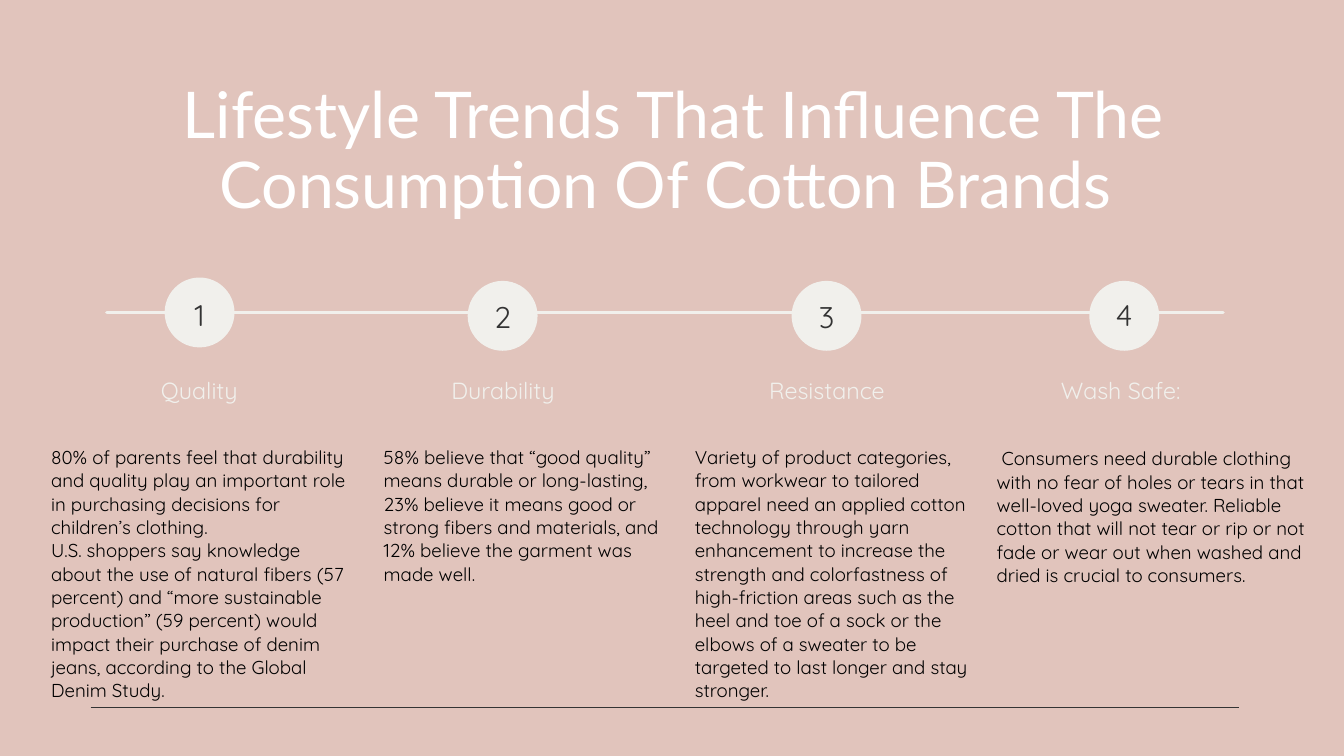
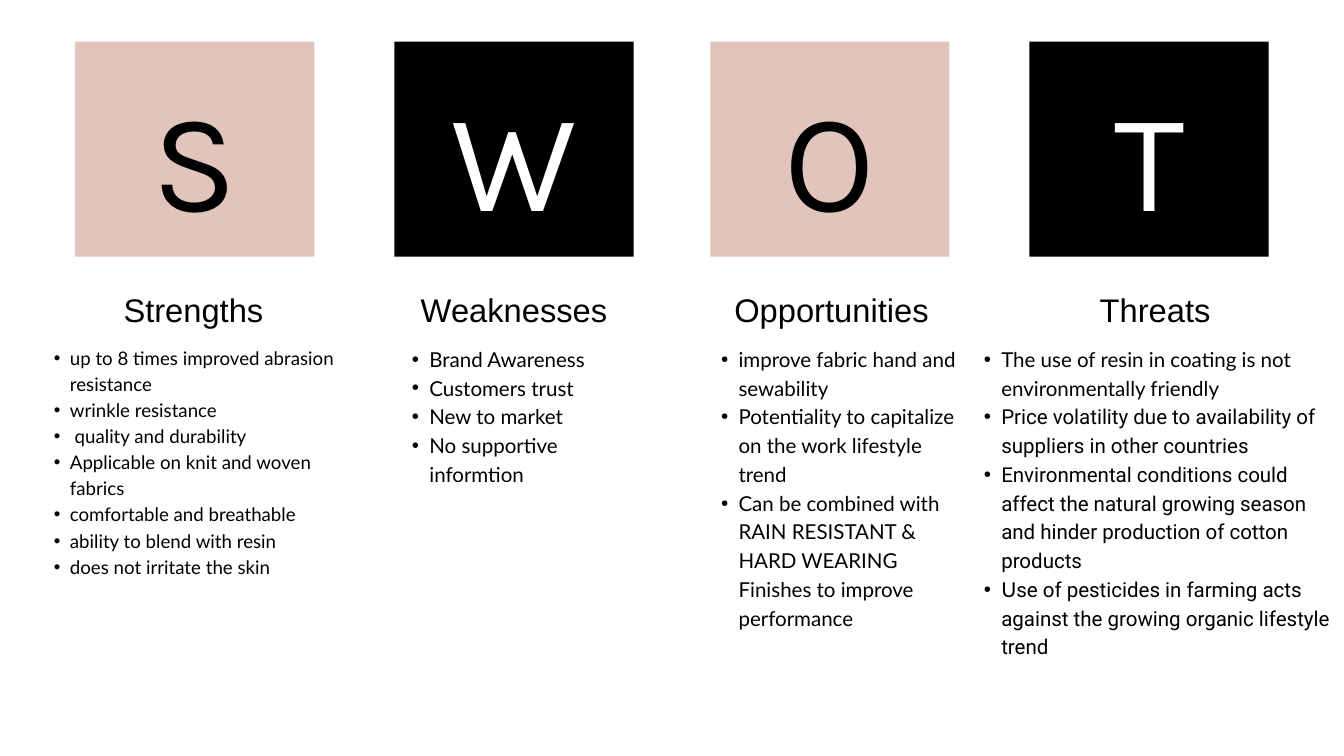
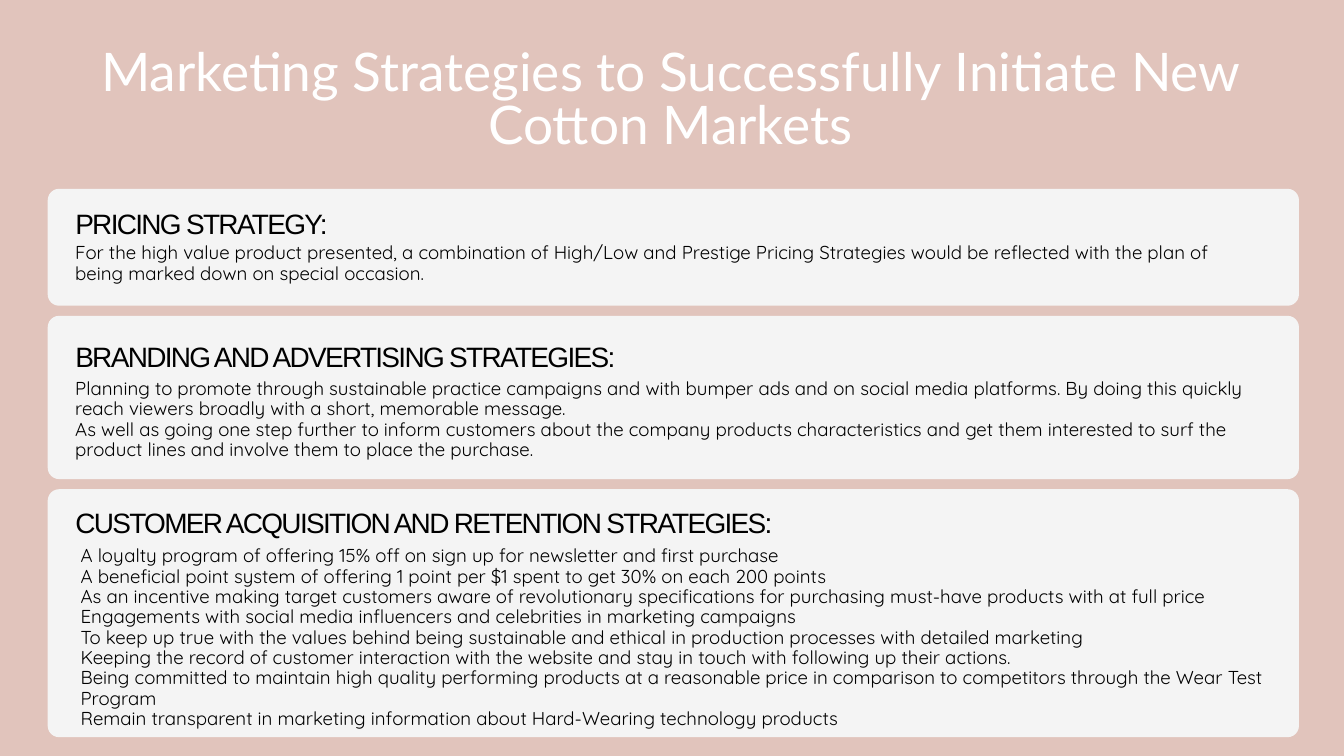
from dataclasses import dataclass, replace
from typing import NamedTuple, Sequence, Union

from lxml.etree import SubElement
from pptx import Presentation
from pptx.dml.color import RGBColor
from pptx.enum.shapes import MSO_CONNECTOR, MSO_SHAPE
from pptx.enum.text import MSO_AUTO_SIZE, PP_ALIGN
from pptx.oxml.ns import qn
from pptx.presentation import Presentation as PresentationType
from pptx.shapes.autoshape import Shape
from pptx.slide import Slide
from pptx.text.text import _Paragraph as Paragraph
from pptx.util import Inches, Pt

BLUSH = "E1C4BC"
IVORY = "F1F0EC"
PALE_GRAY = "F4F4F4"
CHARCOAL = "333333"
BLACK = "000000"
WHITE = "FFFFFF"


class Box(NamedTuple):
    """Left, top, width and height in inches."""

    left: float
    top: float
    width: float
    height: float


class Run(NamedTuple):
    """A piece of text with its own font."""

    text: str
    font: str


ParagraphText = Union[str, Sequence[Run]]


@dataclass(frozen=True)
class TextStyle:
    """Look of a text; sizes and spacing in points, the indent in inches."""

    font: str
    size: float
    line_spacing: float
    color: str = BLACK
    centered: bool = False
    tracking: float = 0
    bullet_margin: float = 0
    bullet_hang: float = 0


@dataclass(frozen=True)
class TrendStep:
    """One numbered step of the trend timeline."""

    circle_left: float
    circle_top: float
    number_top: float
    heading: str
    heading_left: float
    heading_width: float
    body: Sequence[str]
    body_box: Box


@dataclass(frozen=True)
class SwotColumn:
    """One tile of the SWOT slide with its heading and bullets."""

    heading: str
    tile_left: float
    tile_color: str
    letter_color: str
    text_left: float
    text_width: float
    bullets: Sequence[ParagraphText]
    bullet_style: TextStyle


@dataclass(frozen=True)
class StrategyCard:
    """One rounded card of the strategy slide."""

    heading: str
    top: float
    height: float
    heading_top: float
    body_left: float
    body_top: float
    body: Sequence[str]


TREND_TITLE = TextStyle("Lato", 69, 75.2, WHITE, centered=True)
STRATEGY_TITLE = replace(TREND_TITLE, size=57, line_spacing=57)
STEP_NUMBER = TextStyle("Quicksand", 32, 34.9, CHARCOAL, centered=True)
STEP_HEADING = TextStyle("Quicksand", 25, 27.2, IVORY, centered=True)
STEP_BODY = TextStyle("Quicksand", 20, 25)
SWOT_LETTER = TextStyle("Karla", 150, 195, centered=True, tracking=6)
SWOT_HEADING = TextStyle("Arial", 35, 45.5, centered=True)
SWOT_BULLET = TextStyle("Lato", 22, 30.8, bullet_margin=0.52, bullet_hang=0.26)
SMALL_BULLET = TextStyle("Lato", 20, 28, bullet_margin=0.47, bullet_hang=0.24)
CARD_HEADING = TextStyle("Arial", 30, 36, tracking=-1.8)
CARD_BODY = TextStyle("Quicksand", 20, 21.8)

CIRCLE_SIZE = 1.04
CARD_RADIUS = 0.17

TREND_STEPS = (
    TrendStep(
        2.45, 4.13, 4.46, "Quality", 1.06, 3.81,
        (
            "80% of parents feel that durability and quality play an important role in "
            "purchasing decisions for children’s clothing.",
            "U.S. shoppers say knowledge about the use of natural fibers (57 percent) and "
            "“more sustainable production” (59 percent) would impact their purchase of "
            "denim jeans, according to the Global Denim Study.",
        ),
        Box(0.76, 6.62, 4.51, 4.2),
    ),
    TrendStep(
        6.96, 4.18, 4.49, "Durability", 5.58, 3.81,
        (
            "58% believe that “good quality” means durable or long-lasting, 23% believe "
            "it means good or strong fibers and materials, and 12% believe the garment "
            "was made well.",
        ),
        Box(5.71, 6.62, 4.15, 2.45),
    ),
    TrendStep(
        11.78, 4.18, 4.49, "Resistance", 10.4, 3.81,
        (
            "Variety of product categories, from workwear to tailored apparel need an "
            "applied cotton technology through yarn enhancement to increase the strength "
            "and colorfastness of high-friction areas such as the heel and toe of a sock "
            "or the elbows of a sweater to be targeted to last longer and stay stronger.",
        ),
        Box(10.34, 6.62, 4.29, 3.85),
    ),
    TrendStep(
        16.21, 4.18, 4.47, "Wash Safe: ", 14.47, 4.51,
        (
            " Consumers need durable clothing with no fear of holes or tears in that "
            "well-loved yoga sweater. Reliable cotton that will not tear or rip or not "
            "fade or wear out when washed and dried is crucial to consumers.",
        ),
        Box(14.83, 6.64, 4.69, 2.45),
    ),
)

SWOT_COLUMNS = (
    SwotColumn(
        "Strengths", 1.12, BLUSH, BLACK, 0.57, 4.62,
        (
            "up to 8 times improved abrasion resistance",
            "wrinkle resistance",
            " quality and durability",
            "Applicable on knit and woven fabrics",
            "comfortable and breathable",
            "ability to blend with resin",
            "does not irritate the skin",
        ),
        SMALL_BULLET,
    ),
    SwotColumn(
        "Weaknesses", 5.87, BLACK, WHITE, 5.87, 3.56,
        (
            "Brand Awareness",
            "Customers trust",
            "New to market",
            "No supportive informtion",
        ),
        SWOT_BULLET,
    ),
    SwotColumn(
        "Opportunities", 10.57, BLUSH, BLACK, 10.47, 3.81,
        (
            "improve fabric hand and sewability",
            "Potentiality to capitalize on the work lifestyle trend",
            "Can be combined with RAIN RESISTANT & HARD WEARING Finishes to improve "
            "performance",
        ),
        SWOT_BULLET,
    ),
    SwotColumn(
        "Threats", 15.32, BLACK, WHITE, 14.38, 5.62,
        (
            "The use of resin in coating is not environmentally friendly",
            [Run("Price volatility due to availability of suppliers in other countries",
                 "Roboto")],
            [Run("Environmental conditions could affect the natural growing season and "
                 "hinder production of cotton products", "Roboto")],
            [Run("U", "Lato"),
             Run("se of pesticides in farming acts against the growing organic lifestyle "
                 "trend", "Roboto")],
        ),
        SWOT_BULLET,
    ),
)

STRATEGY_CARDS = (
    StrategyCard(
        "PRICING STRATEGY:", 2.81, 1.74, 3.07, 1.12, 3.62,
        (
            "For the high value product presented, a combination of High/Low and Prestige "
            "Pricing Strategies would be reflected with the plan of being marked down on "
            "special occasion.",
        ),
    ),
    StrategyCard(
        "BRANDING AND ADVERTISING STRATEGIES:", 4.7, 2.43, 5.05, 1.12, 5.64,
        (
            "Planning to promote through sustainable practice campaigns and with bumper "
            "ads and on social media platforms. By doing this quickly reach viewers "
            "broadly with a short, memorable message.",
            "As well as going one step further to inform customers about the company "
            "products characteristics and get them interested to surf the product lines "
            "and involve them to place the purchase.",
        ),
    ),
    StrategyCard(
        "CUSTOMER ACQUISITION AND RETENTION STRATEGIES:", 7.28, 3.69, 7.53, 1.2, 8.13,
        (
            "A loyalty program of offering 15% off on sign up for newsletter and first "
            "purchase",
            "A beneficial point system of offering 1 point per $1 spent to get 30% on each "
            "200 points",
            "As an incentive making target customers aware of revolutionary specifications "
            "for purchasing must-have products with at full price",
            "Engagements with social media influencers and celebrities in marketing "
            "campaigns",
            "To keep up true with the values behind being sustainable and ethical in "
            "production processes with detailed marketing",
            "Keeping the record of customer interaction with the website and stay in touch "
            "with following up their actions.",
            "Being committed to maintain high quality performing products at a reasonable "
            "price in comparison to competitors through the Wear Test Program",
            "Remain transparent in marketing information about Hard-Wearing technology "
            "products",
        ),
    ),
)


def rgb(color: str) -> RGBColor:
    """Turn a hex string into a colour."""
    return RGBColor.from_string(color)


def add_slide(presentation: PresentationType, background: str) -> Slide:
    """Add a blank slide with a plain background."""
    slide = presentation.slides.add_slide(presentation.slide_layouts[6])
    slide.background.fill.solid()
    slide.background.fill.fore_color.rgb = rgb(background)
    return slide


def add_filled_shape(slide: Slide, kind: MSO_SHAPE, box: Box, color: str) -> Shape:
    """Add a flat preset shape without outline or shadow."""
    shape = slide.shapes.add_shape(kind, *(Inches(length) for length in box))
    shape.shadow.inherit = False
    shape.fill.solid()
    shape.fill.fore_color.rgb = rgb(color)
    shape.line.fill.background()
    return shape


def add_rule(slide: Slide, left: float, right: float, top: float, color: str,
             width: float, cap: str = "flat") -> None:
    """Add a horizontal line."""
    connector = slide.shapes.add_connector(
        MSO_CONNECTOR.STRAIGHT, Inches(left), Inches(top), Inches(right), Inches(top))
    connector.line.color.rgb = rgb(color)
    connector.line.width = Pt(width)
    properties = connector.element.spPr
    properties.find(qn("a:ln")).set("cap", cap)
    SubElement(properties, qn("a:effectLst"))


def add_bullet(paragraph: Paragraph, style: TextStyle) -> None:
    """Give a paragraph a hanging round bullet."""
    paragraph.level = 1
    properties = paragraph._p.get_or_add_pPr()
    properties.set("marL", str(Inches(style.bullet_margin)))
    properties.set("indent", str(-Inches(style.bullet_hang)))
    SubElement(properties, qn("a:buFont")).set("typeface", "Arial")
    SubElement(properties, qn("a:buChar")).set("char", "•")


def add_run(paragraph: Paragraph, piece: Run, style: TextStyle) -> None:
    """Add one formatted run to a paragraph."""
    run = paragraph.add_run()
    run.text = piece.text
    run.font.name = piece.font
    run.font.size = Pt(style.size)
    run.font.color.rgb = rgb(style.color)
    if style.tracking:
        run._r.get_or_add_rPr().set("spc", str(round(style.tracking * 100)))


def add_text(slide: Slide, box: Box, texts: Sequence[ParagraphText],
             style: TextStyle) -> None:
    """Add a text box with one paragraph for each text."""
    frame = slide.shapes.add_textbox(*(Inches(length) for length in box)).text_frame
    frame.word_wrap = True
    frame.auto_size = MSO_AUTO_SIZE.SHAPE_TO_FIT_TEXT
    frame.margin_left = frame.margin_right = frame.margin_top = frame.margin_bottom = 0
    for index, text in enumerate(texts):
        paragraph = frame.add_paragraph() if index else frame.paragraphs[0]
        paragraph.alignment = PP_ALIGN.CENTER if style.centered else PP_ALIGN.LEFT
        paragraph.line_spacing = Pt(style.line_spacing)
        if style.bullet_margin:
            add_bullet(paragraph, style)
        for piece in [Run(text, style.font)] if isinstance(text, str) else text:
            add_run(paragraph, piece, style)


def build_trends(presentation: PresentationType) -> None:
    """Build the timeline of lifestyle trends."""
    slide = add_slide(presentation, BLUSH)
    add_rule(slide, 1.35, 18.44, 10.53, CHARCOAL, 0.75)
    add_rule(slide, 1.59, 18.2, 4.65, IVORY, 3.75, "rnd")
    title = "Lifestyle Trends That Influence The Consumption Of Cotton Brands "
    add_text(slide, Box(1.06, 1.21, 17.92, 2.19), [title], TREND_TITLE)
    for number, step in enumerate(TREND_STEPS, start=1):
        circle = Box(step.circle_left, step.circle_top, CIRCLE_SIZE, CIRCLE_SIZE)
        add_filled_shape(slide, MSO_SHAPE.OVAL, circle, IVORY)
        add_text(slide, Box(step.circle_left, step.number_top, CIRCLE_SIZE, 0.51),
                 [str(number)], STEP_NUMBER)
        add_text(slide, Box(step.heading_left, 5.64, step.heading_width, 0.39),
                 [step.heading], STEP_HEADING)
        add_text(slide, step.body_box, step.body, STEP_BODY)


def build_swot(presentation: PresentationType) -> None:
    """Build the four SWOT columns."""
    slide = add_slide(presentation, WHITE)
    for column in SWOT_COLUMNS:
        tile = Box(column.tile_left, 0.62, 3.56, 3.2)
        add_filled_shape(slide, MSO_SHAPE.RECTANGLE, tile, column.tile_color)
        add_text(slide, Box(column.tile_left + 0.71, 0.86, 2.14, 2.62),
                 [column.heading[0]], replace(SWOT_LETTER, color=column.letter_color))
        add_text(slide, Box(column.text_left, 4.27, column.text_width, 0.6),
                 [column.heading], SWOT_HEADING)
        add_text(slide, Box(column.text_left, 5.1, column.text_width, 4.24),
                 column.bullets, column.bullet_style)


def build_strategies(presentation: PresentationType) -> None:
    """Build the three marketing strategy cards."""
    slide = add_slide(presentation, BLUSH)
    title = "Marketing Strategies to Successfully Initiate New Cotton Markets"
    add_text(slide, Box(0.63, 0.73, 18.69, 1.68), [title], STRATEGY_TITLE)
    for card in STRATEGY_CARDS:
        panel = add_filled_shape(slide, MSO_SHAPE.ROUNDED_RECTANGLE,
                                 Box(0.71, card.top, 18.62, card.height), PALE_GRAY)
        panel.adjustments[0] = CARD_RADIUS / card.height
        add_text(slide, Box(1.12, card.heading_top, 12.92, 0.84),
                 [card.heading], CARD_HEADING)
        add_text(slide, Box(card.body_left, card.body_top, 17.6, 0.3 * len(card.body)),
                 card.body, CARD_BODY)


def main() -> None:
    """Build and save the presentation."""
    presentation = Presentation()
    presentation.slide_width = Inches(20)
    presentation.slide_height = Inches(11.25)
    build_trends(presentation)
    build_swot(presentation)
    build_strategies(presentation)
    presentation.save("out.pptx")


if __name__ == "__main__":
    main()
